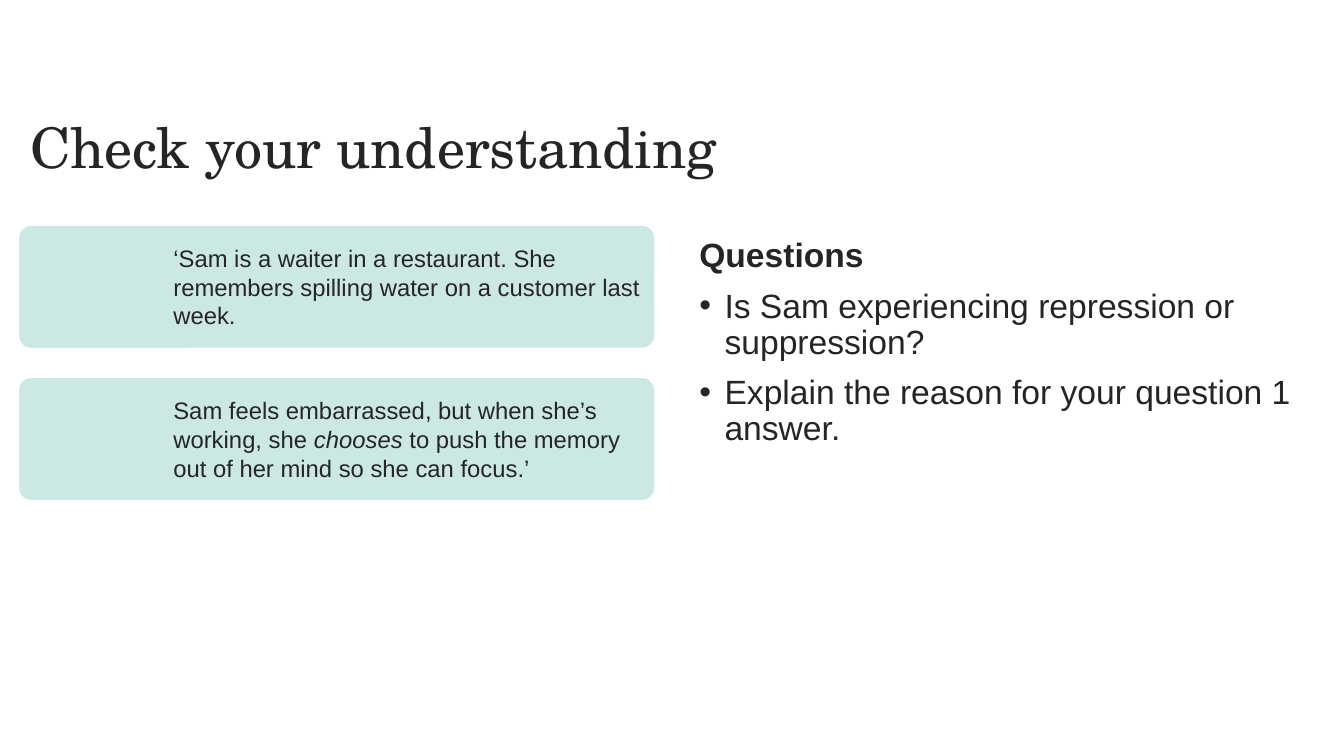
from dataclasses import dataclass

from lxml.etree import SubElement
from pptx import Presentation
from pptx.dml.color import RGBColor
from pptx.enum.shapes import MSO_SHAPE
from pptx.enum.text import MSO_ANCHOR, PP_ALIGN
from pptx.oxml.ns import qn
from pptx.util import Inches, Pt


@dataclass(frozen=True)
class Theme:
    """Colours, fonts and type sizes of the slide."""
    ink: RGBColor = RGBColor.from_string("252525")
    card: RGBColor = RGBColor.from_string("CCE8E5")
    heading_font: str = "TeX Gyre Schola"
    body_font: str = "Arial"
    title_size: int = 40
    question_size: int = 24
    story_size: int = 17


class QuizSlide:
    """Places styled elements on a grid of 40 columns and 30 rows."""

    def __init__(self, deck, theme):
        self.theme = theme
        self.shapes = deck.slides.add_slide(deck.slide_layouts[6]).shapes
        self.column = deck.slide_width / 40
        self.row = deck.slide_height / 30

    def place(self, left, top, width, height):
        return (round(left * self.column), round(top * self.row),
                round(width * self.column), round(height * self.row))

    def frame(self, area, anchor=MSO_ANCHOR.TOP):
        frame = self.shapes.add_textbox(*self.place(*area)).text_frame
        frame.word_wrap = True
        frame.vertical_anchor = anchor
        return frame

    def style(self, paragraph, size, font, spacing=1.0):
        paragraph.alignment = PP_ALIGN.LEFT
        paragraph.line_spacing = spacing
        for run in paragraph.runs:
            run.font.size = Pt(size)
            run.font.name = font
            run.font.color.rgb = self.theme.ink

    def title(self, wording, area):
        frame = self.frame(area, MSO_ANCHOR.MIDDLE)
        frame.text = wording
        self.style(frame.paragraphs[0], self.theme.title_size,
                   self.theme.heading_font, 0.9)

    def card(self, area):
        card = self.shapes.add_shape(MSO_SHAPE.ROUNDED_RECTANGLE, *self.place(*area))
        card.adjustments[0] = 0.1
        card.shadow.inherit = False
        card.fill.solid()
        card.fill.fore_color.rgb = self.theme.card
        card.line.fill.background()

    def story(self, pieces, area):
        frame = self.frame(area, MSO_ANCHOR.MIDDLE)
        frame.margin_left = frame.margin_right = Inches(0.13)
        frame.margin_top = frame.margin_bottom = Inches(0.13)
        paragraph = frame.paragraphs[0]
        for wording, emphasised in pieces:
            run = paragraph.add_run()
            run.text = wording
            run.font.italic = emphasised
        self.style(paragraph, self.theme.story_size, self.theme.body_font)

    def questions(self, heading, items, area):
        frame = self.frame(area)
        frame.text = "\n".join([heading, *items])
        label, *bullets = frame.paragraphs
        for question in bullets:
            properties = question._p.get_or_add_pPr()
            properties.set("marL", str(Inches(0.25)))
            properties.set("indent", str(-Inches(0.25)))
            SubElement(properties, qn("a:buFont")).set("typeface", "Arial")
            SubElement(properties, qn("a:buChar")).set("char", "•")
            question.space_before = Pt(10)
        for paragraph in frame.paragraphs:
            self.style(paragraph, self.theme.question_size, self.theme.body_font, 0.9)
        label.runs[0].font.bold = True


def main():
    """Build the slide and save it."""
    deck = Presentation()
    deck.slide_width, deck.slide_height = Inches(13.33), Inches(7.5)
    quiz = QuizSlide(deck, Theme())

    quiz.title("Check your understanding", (0.6, 4.4, 38.4, 3.16))
    quiz.questions(
        "Questions",
        ["Is Sam experiencing repression or suppression?",
         "Explain the reason for your question 1 answer."],
        (20.52, 9.28, 18.9, 10.48))

    stories = [
        [("‘Sam is a waiter in a restaurant. She remembers spilling water "
          "on a customer last week.", False)],
        [("Sam feels embarrassed, but when she’s working, she ", False),
         ("chooses", True),
         (" to push the memory out of her mind so she can focus.’", False)],
    ]
    card_height, card_step = 4.84, 6.04
    for position, pieces in enumerate(stories):
        top = 8.96 + position * card_step
        quiz.card((0.57, top, 18.9, card_height))
        quiz.story(pieces, (4.77, top, 14.73, card_height))

    deck.save("out.pptx")


if __name__ == "__main__":
    main()
